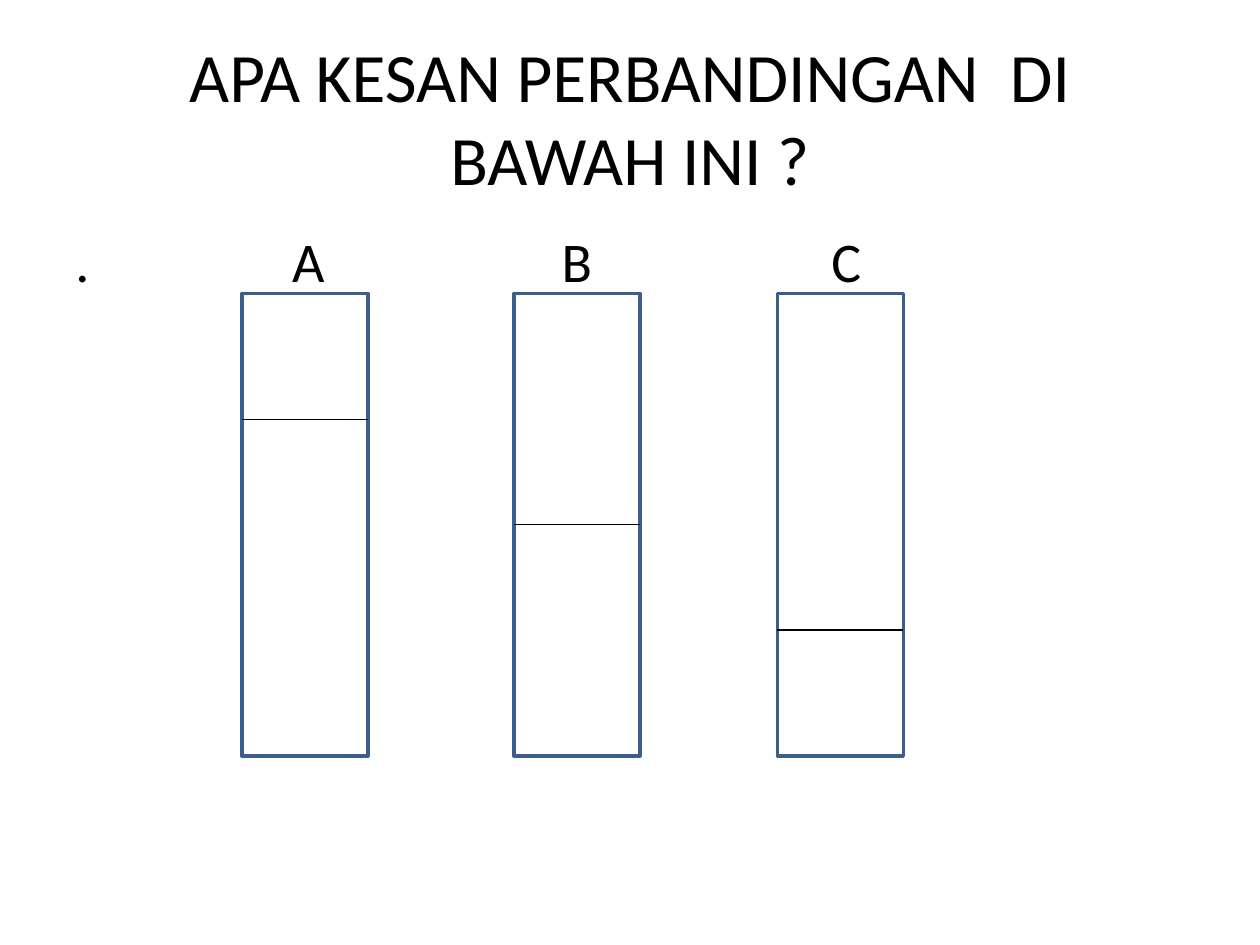
from dataclasses import dataclass

from lxml import etree
from pptx import Presentation
from pptx.dml.color import RGBColor
from pptx.enum.shapes import MSO_CONNECTOR, MSO_SHAPE
from pptx.enum.text import MSO_ANCHOR, PP_ALIGN
from pptx.oxml.ns import qn
from pptx.util import Inches, Pt

RECTANGLE = MSO_SHAPE.RECTANGLE
STRAIGHT = MSO_CONNECTOR.STRAIGHT
CENTER, LEFT = PP_ALIGN.CENTER, PP_ALIGN.LEFT
MIDDLE, TOP = MSO_ANCHOR.MIDDLE, MSO_ANCHOR.TOP

BLACK = RGBColor(0x00, 0x00, 0x00)
WHITE = RGBColor(0xFF, 0xFF, 0xFF)
BLUE = RGBColor(0x3A, 0x5F, 0x8C)

FONT = "Calibri"
LEFT_SIDE, RIGHT_SIDE = 1, 3
MARGIN = 0.5
TEXT_WIDTH = 9
TEXT_INSET = 0.1
BAR_TOP, BAR_WIDTH, BAR_HEIGHT = 2.33, 1, 3.67
BAR_MIDDLE = BAR_HEIGHT / 2


@dataclass
class Bar:
    label: str
    left: float
    label_offset: float
    level: float


BARS = [
    Bar("A", 1.92, 0.4, 1),
    Bar("B", 4.08, 0.38, BAR_MIDDLE),
    Bar("C", 6.17, 0.43, 2.67),
]


def add_text(slide, text: str, *, top: float, height: float, size: float,
             align=LEFT, anchor=TOP, tab_stops=()):
    box = slide.shapes.add_textbox(
        Inches(MARGIN), Inches(top), Inches(TEXT_WIDTH), Inches(height))
    frame = box.text_frame
    frame.word_wrap = True
    frame.vertical_anchor = anchor
    paragraph = frame.paragraphs[0]
    paragraph.alignment = align
    run = paragraph.add_run()
    run.text = text
    run.font.name = FONT
    run.font.size = Pt(size)
    run.font.color.rgb = BLACK
    if tab_stops:
        tab_list = etree.SubElement(paragraph._p.get_or_add_pPr(), qn("a:tabLst"))
        for position in tab_stops:
            etree.SubElement(tab_list, qn("a:tab"), pos=str(Inches(position)), algn="l")
    return box


def add_bar(slide, bar: Bar):
    shape = slide.shapes.add_shape(
        RECTANGLE, Inches(bar.left), Inches(BAR_TOP),
        Inches(BAR_WIDTH), Inches(BAR_HEIGHT))
    shape.shadow.inherit = False
    shape.fill.solid()
    shape.fill.fore_color.rgb = WHITE
    shape.line.color.rgb = BLUE
    shape.line.width = Pt(2)
    return shape


def add_level(slide, bar: Bar, shape) -> None:
    height = Inches(BAR_TOP + bar.level)
    connector = slide.shapes.add_connector(
        STRAIGHT, Inches(bar.left), height, Inches(bar.left + BAR_WIDTH), height)
    connector.line.color.rgb = BLACK
    connector.line.width = Pt(0.75)
    etree.SubElement(connector._element.spPr, qn("a:effectLst"))
    if bar.level == BAR_MIDDLE:
        connector.begin_connect(shape, LEFT_SIDE)
        connector.end_connect(shape, RIGHT_SIDE)


def main() -> None:
    presentation = Presentation()
    presentation.slide_width = Inches(10)
    presentation.slide_height = Inches(7.5)
    slide = presentation.slides.add_slide(presentation.slide_layouts[6])

    add_text(slide, "APA KESAN PERBANDINGAN  DI BAWAH INI ?",
             top=0.3, height=1.25, size=39.6, align=CENTER, anchor=MIDDLE)
    text_left = MARGIN + TEXT_INSET
    add_text(slide, "\t".join([".", *(bar.label for bar in BARS)]),
             top=1.75, height=4.95, size=32,
             tab_stops=[bar.left + bar.label_offset - text_left for bar in BARS])

    shapes = [add_bar(slide, bar) for bar in BARS]
    for bar, shape in zip(BARS, shapes):
        add_level(slide, bar, shape)

    presentation.save("out.pptx")


if __name__ == "__main__":
    main()
